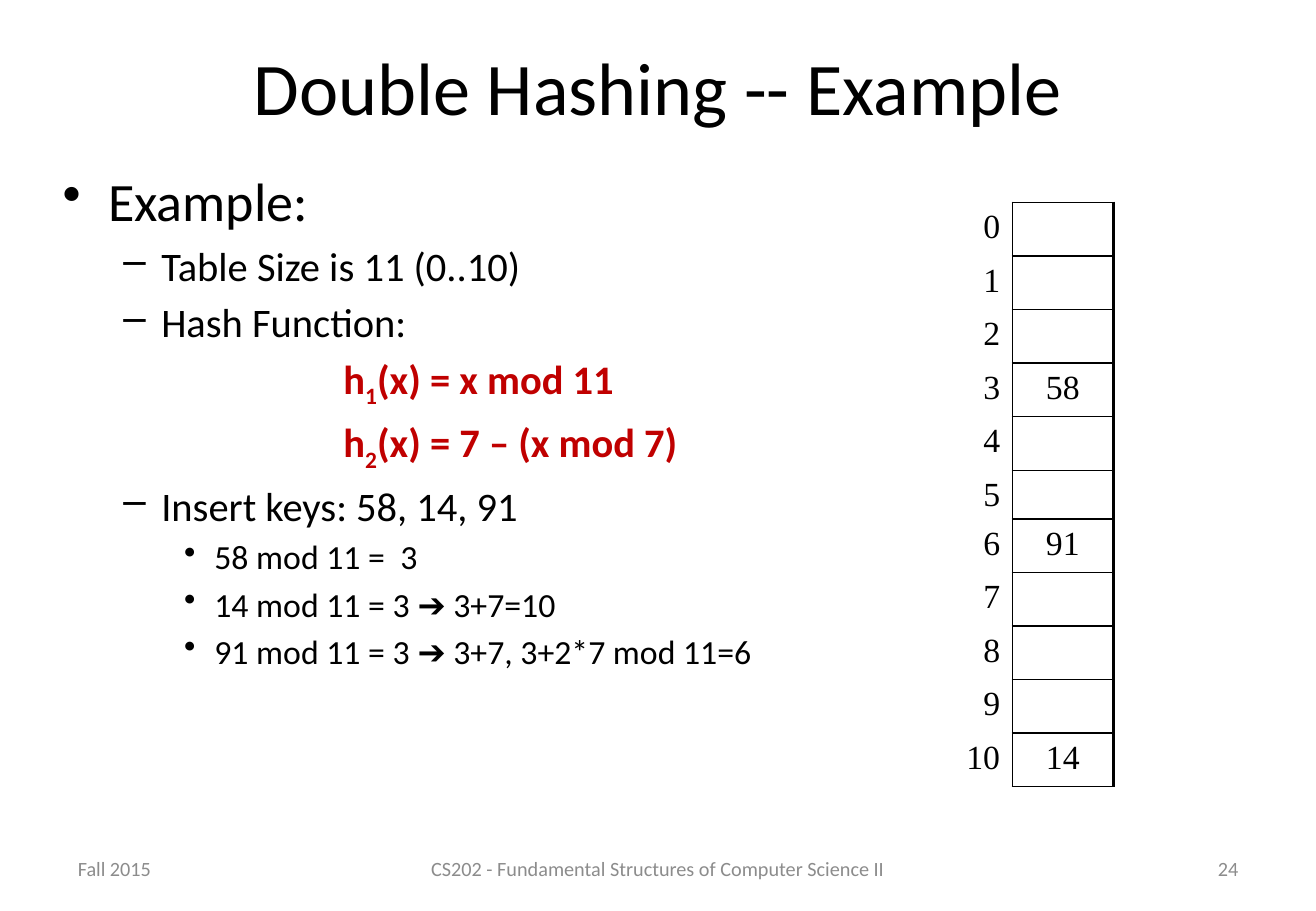
from lxml import etree
from pptx import Presentation
from pptx.dml.color import RGBColor
from pptx.enum.text import MSO_ANCHOR as ANCHOR, PP_ALIGN as ALIGN
from pptx.oxml.ns import qn
from pptx.util import Pt

COLORS = {"text": "000000", "formula": "C00000", "footer": "8C8C8C", "border": "000000"}


def style(p, size, color="text", name="Calibri", align=ALIGN.LEFT, bold=False):
    p.alignment = align
    p.font.size, p.font.name, p.font.bold = Pt(size), name, bold
    p.font.color.rgb = RGBColor.from_string(COLORS[color])


def add_borders(cell, widths):
    """Draw cell borders; widths maps an edge tag to its width in points."""
    tc_pr = cell._tc.get_or_add_tcPr()
    for i, (edge, width) in enumerate(widths.items()):
        ln = etree.Element(qn(f"a:{edge}"), w=str(Pt(width)))
        fill = etree.SubElement(ln, qn("a:solidFill"))
        etree.SubElement(fill, qn("a:srgbClr"), val=COLORS["border"])
        tc_pr.insert(i, ln)


prs = Presentation()
prs.slide_width, prs.slide_height = Pt(780), Pt(540)
s = prs.slides.add_slide(prs.slide_layouts[5])

# Title
title = s.shapes.title
title.left, title.top, title.width, title.height = Pt(39), Pt(18), Pt(702), Pt(66)
title.text_frame.text = "Double Hashing -- Example"
title.text_frame.vertical_anchor = ANCHOR.MIDDLE
style(title.text_frame.paragraphs[0], 44, align=ALIGN.CENTER)

# Outline: level, size, left margin, indent and bullet of each kind of line
KINDS = {
    "head": (0, 32, 27, -27, "•"),
    "point": (1, 24, 58.5, -22.5, "–"),
    "formula": (1, 24, 166.5, 0, None),
    "step": (2, 20, 90, -18, "•"),
}
# In formulas every second piece is a subscript
OUTLINE = [
    ("head", ["Example:"]),
    ("point", ["Table Size is 11 (0..10)"]),
    ("point", ["Hash Function:"]),
    ("formula", ["h", "1", "(x) = x mod 11"]),
    ("formula", ["h", "2", "(x) = 7 – (x mod 7)"]),
    ("point", ["Insert keys: 58, 14, 91"]),
    ("step", ["58 mod 11 =  3"]),
    ("step", ["14 mod 11 = 3 ➔ 3+7=10"]),
    ("step", ["91 mod 11 = 3 ➔ 3+7, 3+2*7 mod 11=6"]),
]
tf = s.shapes.add_textbox(Pt(30), Pt(96), Pt(486), Pt(402)).text_frame
tf.word_wrap = True
for i, (kind, pieces) in enumerate(OUTLINE):
    level, size, margin, indent, bullet = KINDS[kind]
    p = tf.add_paragraph() if i else tf.paragraphs[0]
    p.level = level
    p.space_before = Pt(size * 0.2)
    is_formula = kind == "formula"
    style(p, size, "formula" if is_formula else "text", bold=is_formula)
    p_pr = p._p.get_or_add_pPr()
    p_pr.set("marL", str(Pt(margin)))
    p_pr.set("indent", str(Pt(indent)))
    if bullet:
        mark = etree.Element(qn("a:buChar"), char=bullet)
        p_pr.find(qn("a:defRPr")).addprevious(mark)
    for j, piece in enumerate(pieces):
        r = p.add_run()
        r.text = piece
        if j % 2:
            r._r.get_or_add_rPr().set("baseline", "-25000")

# Hash table
SLOTS = 11
STORED = {3: 58, 6: 91, 10: 14}
table = s.shapes.add_table(SLOTS, 2, Pt(558), Pt(120), Pt(102), Pt(346.3)).table
table.first_row = table.horz_banding = False
table.columns[0].width, table.columns[1].width = Pt(42), Pt(60)
for slot in range(SLOTS):
    table.rows[slot].height = Pt(28.8 if slot == 5 else 31.75)
    index, value = table.cell(slot, 0), table.cell(slot, 1)
    for cell, text, align in ((index, slot, ALIGN.RIGHT),
                              (value, STORED.get(slot, ""), ALIGN.CENTER)):
        cell.text = str(text)
        cell.margin_bottom = 0
        cell.fill.background()
        style(cell.text_frame.paragraphs[0], 20, name="Times New Roman", align=align)
    add_borders(index, {"lnR": 1})
    add_borders(value, {"lnL": 1, "lnR": 2.25, "lnT": 1, "lnB": 1})

# Footer
for left, width, text, align in (
    (39, 182, "Fall 2015", ALIGN.LEFT),
    (246, 288, "CS202 - Fundamental Structures of Computer Science II", ALIGN.CENTER),
    (559, 182, "24", ALIGN.RIGHT),
):
    tf = s.shapes.add_textbox(Pt(left), Pt(500.5), Pt(width), Pt(28.75)).text_frame
    tf.word_wrap = True
    tf.vertical_anchor = ANCHOR.MIDDLE
    tf.text = text
    style(tf.paragraphs[0], 12, "footer", align=align)

prs.save("out.pptx")
